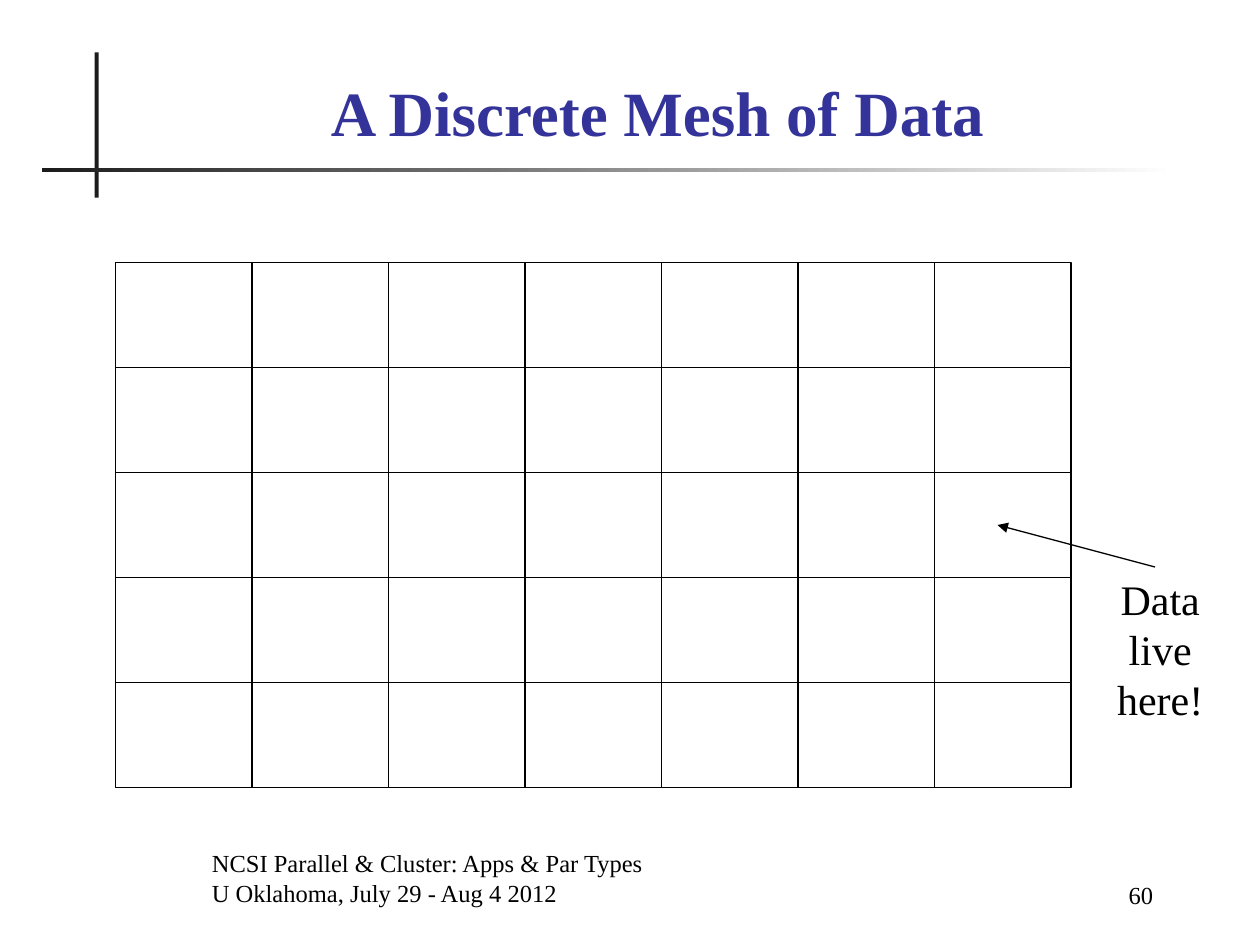
import pptx
import pptx.dml.color
import pptx.enum.shapes
import pptx.enum.text
import pptx.util
from lxml import etree
from pptx.oxml.ns import qn

Pt = pptx.util.Pt
ALIGN = pptx.enum.text.PP_ALIGN
ANCHOR = pptx.enum.text.MSO_ANCHOR
RECT = pptx.enum.shapes.MSO_SHAPE.RECTANGLE

FONT = "Times New Roman"
COLORS = {"ink": "000000", "title": "333399", "bar": "1C1C1C", "paper": "FFFFFF"}


def rgb(name):
    return pptx.dml.color.RGBColor.from_string(COLORS[name])


def write(sp, lines, size, color="ink", bold=False, align=ALIGN.LEFT, anchor=ANCHOR.TOP):
    tf = sp.text_frame
    tf.word_wrap = True
    tf.vertical_anchor = anchor
    for i, line in enumerate(lines):
        p = tf.add_paragraph() if i else tf.paragraphs[0]
        p.alignment = align
        r = p.add_run()
        r.text = line
        r.font.name = FONT
        r.font.size = Pt(size)
        r.font.bold = bold
        r.font.color.rgb = rgb(color)


def add_text(s, x, y, w, h, lines, size, **style):
    write(s.shapes.add_textbox(Pt(x), Pt(y), Pt(w), Pt(h)), lines, size, **style)


def add_rect(s, x, y, w, h):
    sp = s.shapes.add_shape(RECT, Pt(x), Pt(y), Pt(w), Pt(h))
    sp.shadow.inherit = False
    return sp


def add_header(s, x, y, w, h):
    # Crossed bars: solid upright, fading rule
    upright = add_rect(s, x + 30, y, 2.4, h)
    upright.fill.solid()
    upright.fill.fore_color.rgb = rgb("bar")
    upright.line.fill.background()

    rule = add_rect(s, x, y + 66, w, 2.4)
    rule.fill.gradient()
    rule.fill.gradient_angle = 0
    for stop, position, color in zip(rule.fill.gradient_stops, (0, 1), ("bar", "paper")):
        stop.position = position
        stop.color.rgb = rgb(color)
    rule.line.fill.background()

    # Title
    sp = s.shapes.title
    sp.left, sp.top, sp.width, sp.height = Pt(x + 36), Pt(y + 6), Pt(631.5), Pt(53)
    write(sp, ["A Discrete Mesh of Data"], 36, color="title", bold=True,
          align=ALIGN.CENTER, anchor=ANCHOR.BOTTOM)


def add_mesh(s, x, y, w, h, cols=7, rows=5):
    cell_w, cell_h = w / cols, h / rows
    for row in range(rows):
        for col in range(cols):
            cell = add_rect(s, x + col * cell_w, y + row * cell_h, cell_w, cell_h)
            cell.fill.background()
            cell.line.color.rgb = rgb("ink")
            cell.line.width = Pt(0.75)


def add_callout(s, x, y, w, h):
    # Arrow from the label back into the mesh
    arrow = s.shapes.add_connector(pptx.enum.shapes.MSO_CONNECTOR.STRAIGHT,
                                   Pt(x + 36), Pt(y), Pt(x - 54), Pt(y - 24))
    arrow.line.color.rgb = rgb("ink")
    arrow.line.width = Pt(0.75)
    etree.SubElement(arrow.line._get_or_add_ln(), qn("a:tailEnd"), type="triangle")
    etree.SubElement(arrow._element.spPr, qn("a:effectLst"))

    add_text(s, x, y, w, h, ["Data live here!"], 24, align=ALIGN.CENTER)


def add_footer(s, x, y, w, h):
    add_text(s, x, y, 438, h,
             ["NCSI Parallel & Cluster: Apps & Par Types",
              "U Oklahoma, July 29 - Aug 4 2012"], 14, anchor=ANCHOR.BOTTOM)
    add_text(s, x + w - 102, y + 1.5, 102, h, ["60"], 14,
             align=ALIGN.RIGHT, anchor=ANCHOR.BOTTOM)


def main():
    prs = pptx.Presentation()
    prs.slide_width, prs.slide_height = Pt(720), Pt(540)
    s = prs.slides.add_slide(prs.slide_layouts[5])
    add_header(s, 24, 30, 648, 83)
    add_mesh(s, 66, 150, 546, 300)
    add_callout(s, 624, 324, 78, 93.6)
    add_footer(s, 114, 486, 552, 36)
    prs.save("out.pptx")


if __name__ == "__main__":
    main()
